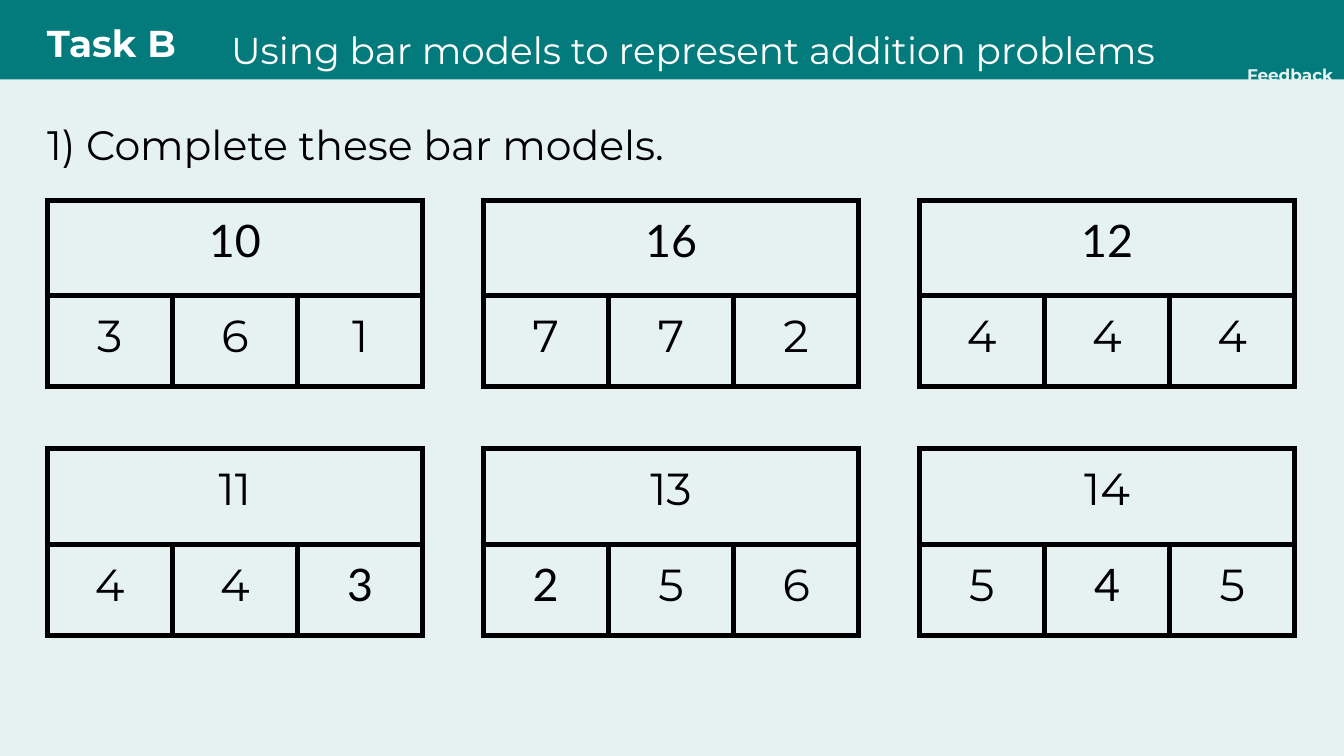
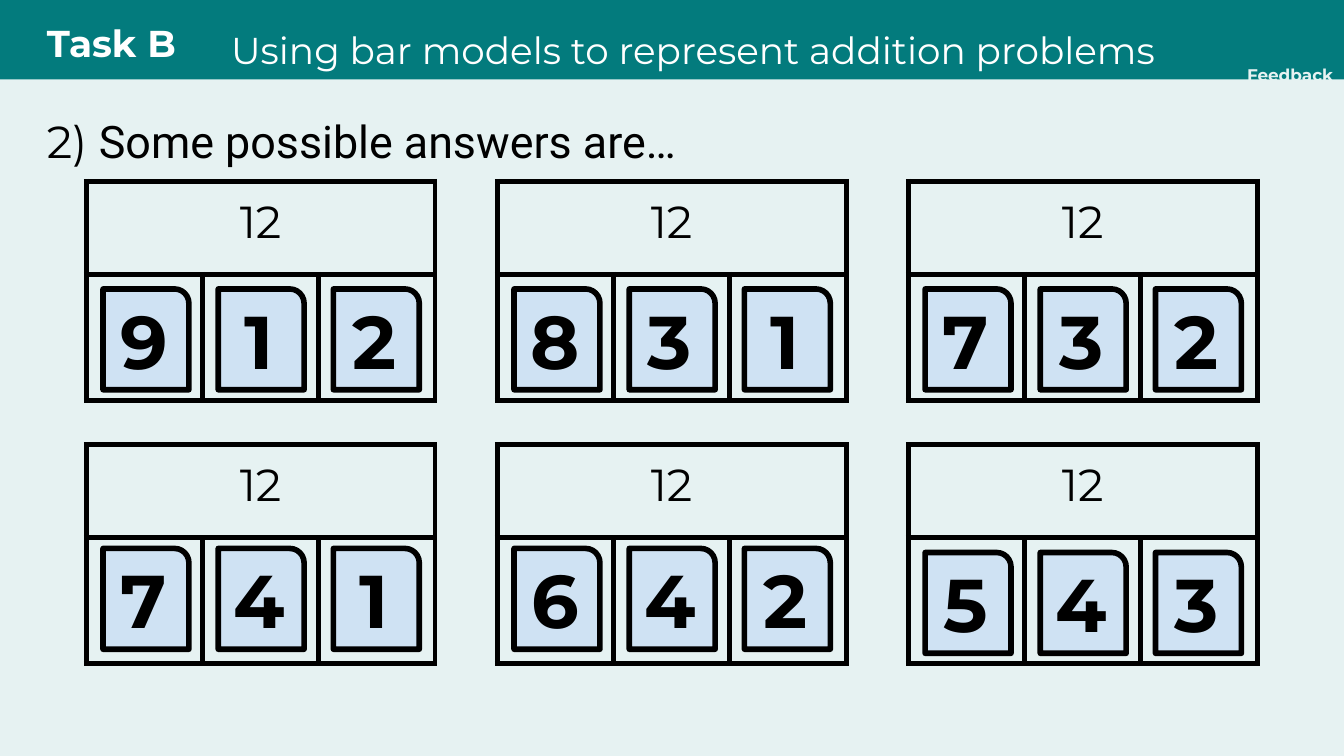
from lxml.etree import SubElement
from pptx import Presentation
from pptx.dml.color import RGBColor
from pptx.enum.shapes import MSO_SHAPE as Preset
from pptx.enum.text import MSO_ANCHOR as Anchor, PP_ALIGN as Align
from pptx.oxml.ns import qn
from pptx.util import Pt

TEAL, MINT, CARD_BLUE = "037B7D", "E6F2F2", "CFE2F3"
BLACK, WHITE = "000000", "FFFFFF"
MAIN_FONT, ANSWER_FONT, HEADING_FONT = "Montserrat", "Lato", "Roboto"
LINE_WIDTH = 3
PART_COUNT = 3
MODELS_PER_ROW = 3

# Each model: whole, its three parts, and the index of the number to be found
COMPLETED_MODELS = [
    ([10, 3, 6, 1], 0), ([16, 7, 7, 2], 0), ([12, 4, 4, 4], 0),
    ([11, 4, 4, 3], 3), ([13, 2, 5, 6], 1), ([14, 5, 4, 5], 2),
]
WAYS_TO_MAKE_12 = [(9, 1, 2), (8, 3, 1), (7, 3, 2), (7, 4, 1), (6, 4, 2), (5, 4, 3)]


def rgb(hex_string):
    return RGBColor.from_string(hex_string)


def write_text(frame, content, *, font=MAIN_FONT, size=24, color=BLACK, bold=False,
               align=Align.LEFT, anchor=Anchor.TOP, spacing=None):
    """Write a string, or a list of (text, font) runs, as one paragraph."""
    frame.word_wrap = True
    frame.vertical_anchor = anchor
    paragraph = frame.paragraphs[0]
    paragraph.alignment = align
    paragraph.line_spacing = spacing
    runs = [(content, font)] if isinstance(content, str) else content
    for words, run_font in runs:
        run = paragraph.add_run()
        run.text = words
        run.font.name = run_font
        run.font.size = Pt(size)
        run.font.bold = bold
        run.font.color.rgb = rgb(color)


def set_insets(frame, left, top, right, bottom):
    frame.margin_left, frame.margin_top = Pt(left), Pt(top)
    frame.margin_right, frame.margin_bottom = Pt(right), Pt(bottom)


def add_text(slide, content, left, top, width, height, insets=(0, 0, 0, 0), **text_format):
    box = slide.shapes.add_textbox(Pt(left), Pt(top), Pt(width), Pt(height))
    set_insets(box.text_frame, *insets)
    write_text(box.text_frame, content, **text_format)


def add_shape(slide, preset, left, top, width, height, fill, line=None):
    shape = slide.shapes.add_shape(preset, Pt(left), Pt(top), Pt(width), Pt(height))
    shape.shadow.inherit = False
    shape.fill.solid()
    shape.fill.fore_color.rgb = rgb(fill)
    if line:
        shape.line.color.rgb = rgb(line)
        shape.line.width = Pt(LINE_WIDTH)
    else:
        shape.line.fill.background()
    return shape


def add_number_card(slide, number, left, top):
    card = add_shape(slide, Preset.ROUND_1_RECTANGLE, left, top, 46, 54, CARD_BLUE, BLACK)
    set_insets(card.text_frame, 0, 7.2, 0, 7.2)
    write_text(card.text_frame, str(number), size=40, bold=True,
               align=Align.CENTER, anchor=Anchor.MIDDLE)


def style_cell(cell):
    """Give a cell a black border on every side and no fill."""
    properties = cell._tc.get_or_add_tcPr()
    for side in ("a:lnL", "a:lnR", "a:lnT", "a:lnB"):
        border = SubElement(properties, qn(side), w=str(Pt(LINE_WIDTH)))
        fill = SubElement(border, qn("a:solidFill"))
        SubElement(fill, qn("a:srgbClr"), val=BLACK)
    cell.fill.background()


def add_bar_model(slide, left, top, column_width, row_heights, numbers, answer=None):
    """Draw a whole above its parts; numbers holds the whole, then any parts."""
    frame = slide.shapes.add_table(2, PART_COUNT, Pt(left), Pt(top),
                                   Pt(column_width * PART_COUNT), Pt(sum(row_heights)))
    table = frame.table
    table.first_row = table.horz_banding = False
    for column in table.columns:
        column.width = Pt(column_width)
    for row, height in zip(table.rows, row_heights):
        row.height = Pt(height)
    for cell in table.iter_cells():
        set_insets(cell, 7.2, 7.2, 7.2, 7.2)
        style_cell(cell)
    table.cell(0, 0).merge(table.cell(0, PART_COUNT - 1))
    cells = [table.cell(0, 0)] + [table.cell(1, part) for part in range(PART_COUNT)]
    for index, (cell, number) in enumerate(zip(cells, numbers)):
        write_text(cell.text_frame, str(number), align=Align.CENTER,
                   font=ANSWER_FONT if index == answer else MAIN_FONT)


def grid_position(index, left, top, step_x, step_y):
    row, column = divmod(index, MODELS_PER_ROW)
    return left + column * step_x, top + row * step_y


def add_task_slide(presentation):
    slide = presentation.slides.add_slide(presentation.slide_layouts[6])
    slide.background.fill.solid()
    slide.background.fill.fore_color.rgb = rgb(MINT)
    add_shape(slide, Preset.RECTANGLE, 0, 0, 720, 42.5, TEAL)
    add_text(slide, "Task B", 25.2, 3.6, 83, 39, insets=(0, 7.2, 7.2, 7.2),
             size=20, color=WHITE, bold=True)
    add_text(slide, "Feedback", 667.4, 34.6, 47.5, 10.8,
             size=9, color=MINT, bold=True, align=Align.CENTER)
    add_text(slide, "Using bar models to represent addition problems",
             123.8, 10.8, 540, 26.6, size=20, color=WHITE, spacing=1.15)
    return slide


def add_completed_models_slide(presentation):
    slide = add_task_slide(presentation)
    add_text(slide, "1) Complete these bar models.", 25.2, 59.8, 648.7, 237.6,
             size=22, spacing=1.15)
    for index, (numbers, answer) in enumerate(COMPLETED_MODELS):
        left, top = grid_position(index, 25.2, 107.2, 233.6, 133.2)
        add_bar_model(slide, left, top, 67.1, (51.2, 48.8), numbers, answer)


def add_possible_answers_slide(presentation):
    slide = add_task_slide(presentation)
    add_text(slide, [("2) ", MAIN_FONT), ("Some possible answers are…", HEADING_FONT)],
             25.2, 56.9, 604.8, 31.7, spacing=1.15)
    last = len(WAYS_TO_MAKE_12) - 1
    for index, parts in enumerate(WAYS_TO_MAKE_12):
        left, top = grid_position(index, 55.2, 154.8, 220.2, 139)
        if index == last:
            top += 2.2
        for part, number in enumerate(parts):
            add_number_card(slide, number, left + part * 61.7, top)
    for index, parts in enumerate(WAYS_TO_MAKE_12):
        left, top = grid_position(index, 46.2, 97.2, 220.2, 141)
        add_bar_model(slide, left, top, 62.3, (49.8, 67.6), [sum(parts)])


def main():
    presentation = Presentation()
    presentation.slide_width, presentation.slide_height = Pt(720), Pt(405)
    add_completed_models_slide(presentation)
    add_possible_answers_slide(presentation)
    presentation.save("out.pptx")


if __name__ == "__main__":
    main()
